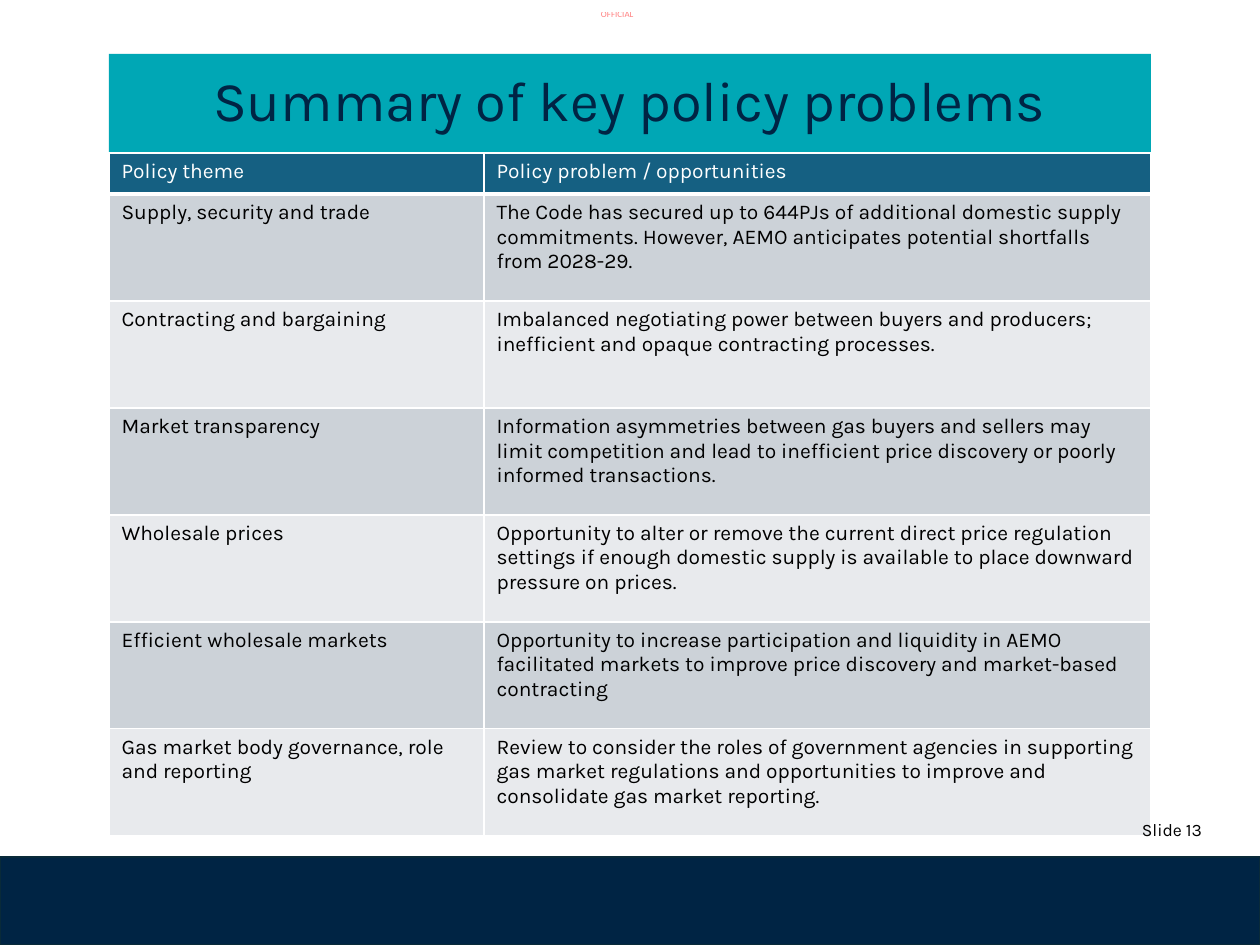
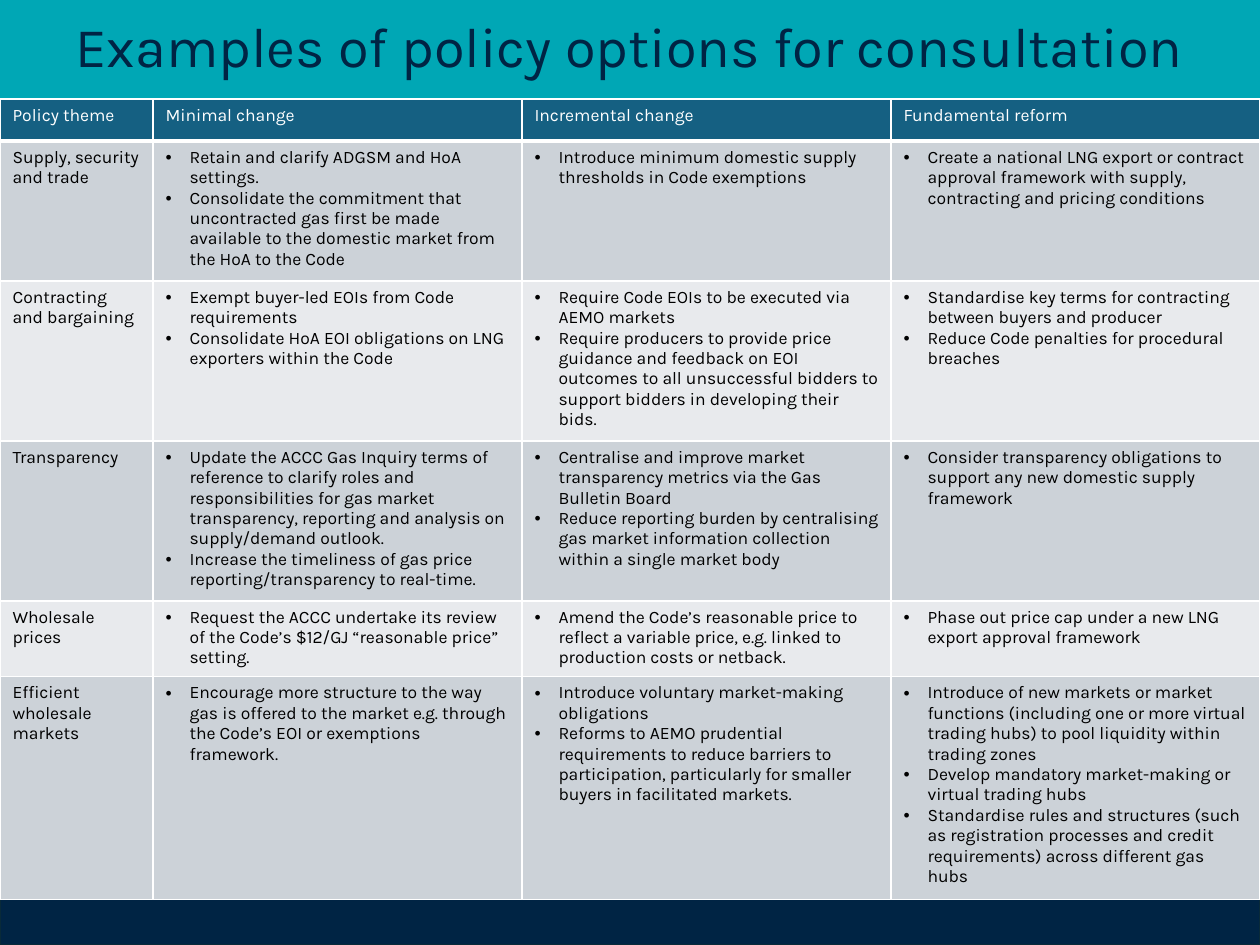
from dataclasses import dataclass

from lxml import etree
from pptx import Presentation
from pptx import util as u
from pptx.dml import color
from pptx.enum import shapes, text
from pptx.oxml import ns

PX_PER_INCH = 126
SLIDE_W, SLIDE_H = 1260, 945
FONT = "Karla"
NAVY, TEAL, BLUE = "002444", "00A7B5", "156082"
WHITE, BLACK, RED = "FFFFFF", "000000", "FF0000"
FOOTER_LINE = "092A39"
STRIPES = ("CCD2D8", "E8EAED")
TITLE_H = 99
BULLET_INDENT = 24

# A list in a cell is bulleted, a string is plain text.
Cell = str | list[str]


@dataclass(frozen=True)
class Box:
    x: int
    y: int
    w: int
    h: int


@dataclass(frozen=True)
class Table:
    x: int
    y: int
    cols: list[int]
    row_heights: list[int]
    size: int
    rows: list[list[Cell]]


PROBLEMS = Table(
    109, 153, [375, 667], [41] + [107] * 6, 12,
    [
        ["Policy theme", "Policy problem / opportunities"],
        ["Supply, security and trade",
         "The Code has secured up to 644PJs of additional domestic supply commitments. "
         "However, AEMO anticipates potential shortfalls from 2028-29."],
        ["Contracting and bargaining",
         "Imbalanced negotiating power between buyers and producers; "
         "inefficient and opaque contracting processes."],
        ["Market transparency",
         "Information asymmetries between gas buyers and sellers may limit competition "
         "and lead to inefficient price discovery or poorly informed transactions."],
        ["Wholesale prices",
         "Opportunity to alter or remove the current direct price regulation settings if "
         "enough domestic supply is available to place downward pressure on prices."],
        ["Efficient wholesale markets",
         "Opportunity to increase participation and liquidity in AEMO facilitated markets "
         "to improve price discovery and market-based contracting"],
        ["Gas market body governance, role and reporting",
         "Review to consider the roles of government agencies in supporting gas market "
         "regulations and opportunities to improve and consolidate gas market reporting."],
    ],
)

OPTIONS = Table(
    0, TITLE_H, [153, 369, 369, 369], [42, 140, 160, 160, 75, 223], 10,
    [
        ["Policy theme", "Minimal change", "Incremental change", "Fundamental reform"],
        ["Supply, security and trade",
         ["Retain and clarify ADGSM and HoA settings.",
          "Consolidate the commitment that uncontracted gas first be made available "
          "to the domestic market from the HoA to the Code"],
         ["Introduce minimum domestic supply thresholds in Code exemptions"],
         ["Create a national LNG export or contract approval framework with supply, "
          "contracting and pricing conditions"]],
        ["Contracting and bargaining",
         ["Exempt buyer-led EOIs from Code requirements",
          "Consolidate HoA EOI obligations on LNG exporters within the Code"],
         ["Require Code EOIs to be executed via AEMO markets",
          "Require producers to provide price guidance and feedback on EOI outcomes to all "
          "unsuccessful bidders to support bidders in developing their bids."],
         ["Standardise key terms for contracting between buyers and producer",
          "Reduce Code penalties for procedural breaches"]],
        ["Transparency",
         ["Update the ACCC Gas Inquiry terms of reference to clarify roles and "
          "responsibilities for gas market transparency, reporting and analysis on "
          "supply/demand outlook.",
          "Increase the timeliness of gas price reporting/transparency to real-time."],
         ["Centralise and improve market transparency metrics via the Gas Bulletin Board",
          "Reduce reporting burden by centralising gas market information collection "
          "within a single market body"],
         ["Consider transparency obligations to support any new domestic supply framework"]],
        ["Wholesale prices",
         ["Request the ACCC undertake its review of the Code’s $12/GJ “reasonable price” "
          "setting."],
         ["Amend the Code’s reasonable price to reflect a variable price, e.g. linked to "
          "production costs or netback."],
         ["Phase out price cap under a new LNG export approval framework"]],
        ["Efficient wholesale markets",
         ["Encourage more structure to the way gas is offered to the market e.g. through "
          "the Code’s EOI or exemptions framework."],
         ["Introduce voluntary market-making obligations",
          "Reforms to AEMO prudential requirements to reduce barriers to participation, "
          "particularly for smaller buyers in facilitated markets."],
         ["Introduce of new markets or market functions (including one or more virtual "
          "trading hubs) to pool liquidity within trading zones",
          "Develop mandatory market-making or virtual trading hubs",
          "Standardise rules and structures (such as registration processes and credit "
          "requirements) across different gas hubs"]],
    ],
)


def px(n: int) -> u.Emu:
    return u.Emu(round(n * 914400 / PX_PER_INCH))


def rgb(value: str) -> color.RGBColor:
    return color.RGBColor.from_string(value)


def place(box: Box) -> tuple[u.Emu, ...]:
    return px(box.x), px(box.y), px(box.w), px(box.h)


def add_run(p, words: str, size: float, hex_color: str, font: str = FONT):
    r = p.add_run()
    r.text = words
    r.font.name = font
    r.font.size = u.Pt(size)
    r.font.bold = False
    r.font.color.rgb = rgb(hex_color)
    return r


def add_band(s, box: Box, fill: str, line: str | None = None):
    """Draw a flat rectangle, outlined only if a line colour is given."""
    sp = s.shapes.add_shape(shapes.MSO_SHAPE.RECTANGLE, *place(box))
    sp.shadow.inherit = False
    sp.fill.solid()
    sp.fill.fore_color.rgb = rgb(fill)
    if line:
        sp.line.color.rgb = rgb(line)
        sp.line.width = u.Pt(1.5)
    else:
        sp.line.fill.background()
    return sp


def add_title(s, box: Box, words: str) -> None:
    tf = add_band(s, box, TEAL).text_frame
    tf.word_wrap = True
    tf.vertical_anchor = text.MSO_ANCHOR.MIDDLE
    p = tf.paragraphs[0]
    p.alignment = text.PP_ALIGN.CENTER
    p.line_spacing = 0.9
    add_run(p, words, 32, NAVY)


def add_classification(s) -> None:
    tf = s.shapes.add_textbox(*place(Box(601, 9, 60, 11))).text_frame
    tf.margin_left = tf.margin_right = tf.margin_top = tf.margin_bottom = 0
    r = add_run(tf.paragraphs[0], "OFFICIAL", 5.1, RED, "Calibri")
    rgb_color = r.font.fill._xPr.find(".//" + ns.qn("a:srgbClr"))
    etree.SubElement(rgb_color, ns.qn("a:alpha"), val="50000")


def add_slide_number(s, words: str) -> None:
    tf = s.shapes.add_textbox(*place(Box(1084, 813, 176, 35))).text_frame
    tf.word_wrap = True
    p = tf.paragraphs[0]
    p.alignment = text.PP_ALIGN.CENTER
    add_run(p, words, 10, BLACK)


def set_borders(cell, bottom: int) -> None:
    """Give a cell white borders, 1 pt except for the bottom one."""
    tc_pr = cell._tc.get_or_add_tcPr()
    for side, width in (("L", 1), ("R", 1), ("T", 1), ("B", bottom)):
        ln = etree.SubElement(tc_pr, ns.qn(f"a:ln{side}"), w=str(u.Pt(width)))
        fill = etree.SubElement(ln, ns.qn("a:solidFill"))
        etree.SubElement(fill, ns.qn("a:srgbClr"), val=WHITE)


def add_bullet(p) -> None:
    p_pr = p._p.get_or_add_pPr()
    p_pr.set("marL", str(px(BULLET_INDENT)))
    p_pr.set("indent", str(-px(BULLET_INDENT)))
    etree.SubElement(p_pr, ns.qn("a:buFont"), typeface="Arial")
    etree.SubElement(p_pr, ns.qn("a:buChar"), char="•")


def fill_cell(cell, content: Cell, size: int, row: int) -> None:
    header = row == 0
    set_borders(cell, 3 if header else 1)
    cell.fill.solid()
    cell.fill.fore_color.rgb = rgb(BLUE if header else STRIPES[(row - 1) % 2])
    tf = cell.text_frame
    bulleted = isinstance(content, list)
    for i, words in enumerate(content if bulleted else [content]):
        p = tf.add_paragraph() if i else tf.paragraphs[0]
        if bulleted:
            add_bullet(p)
        add_run(p, words, size, WHITE if header else BLACK)


def add_policy_table(s, spec: Table) -> None:
    box = Box(spec.x, spec.y, sum(spec.cols), sum(spec.row_heights))
    table = s.shapes.add_table(len(spec.rows), len(spec.cols), *place(box)).table
    for column, width in zip(table.columns, spec.cols):
        column.width = px(width)
    for i, (height, contents) in enumerate(zip(spec.row_heights, spec.rows)):
        table.rows[i].height = px(height)
        for j, content in enumerate(contents):
            fill_cell(table.cell(i, j), content, spec.size, i)


def add_policy_slide(prs, title: str, title_y: int, spec: Table):
    """Add a slide with the footer band, a title as wide as the table, and the table."""
    s = prs.slides.add_slide(prs.slide_layouts[6])
    add_band(s, Box(0, 857, SLIDE_W, SLIDE_H - 857), NAVY, FOOTER_LINE)
    add_title(s, Box(spec.x, title_y, sum(spec.cols), TITLE_H), title)
    add_policy_table(s, spec)
    return s


def main() -> None:
    prs = Presentation()
    prs.slide_width, prs.slide_height = px(SLIDE_W), px(SLIDE_H)
    s = add_policy_slide(prs, "Summary of key policy problems", 54, PROBLEMS)
    add_classification(s)
    add_slide_number(s, "Slide 13")
    add_policy_slide(prs, "Examples of policy options for consultation", 0, OPTIONS)
    prs.save("out.pptx")


if __name__ == "__main__":
    main()
